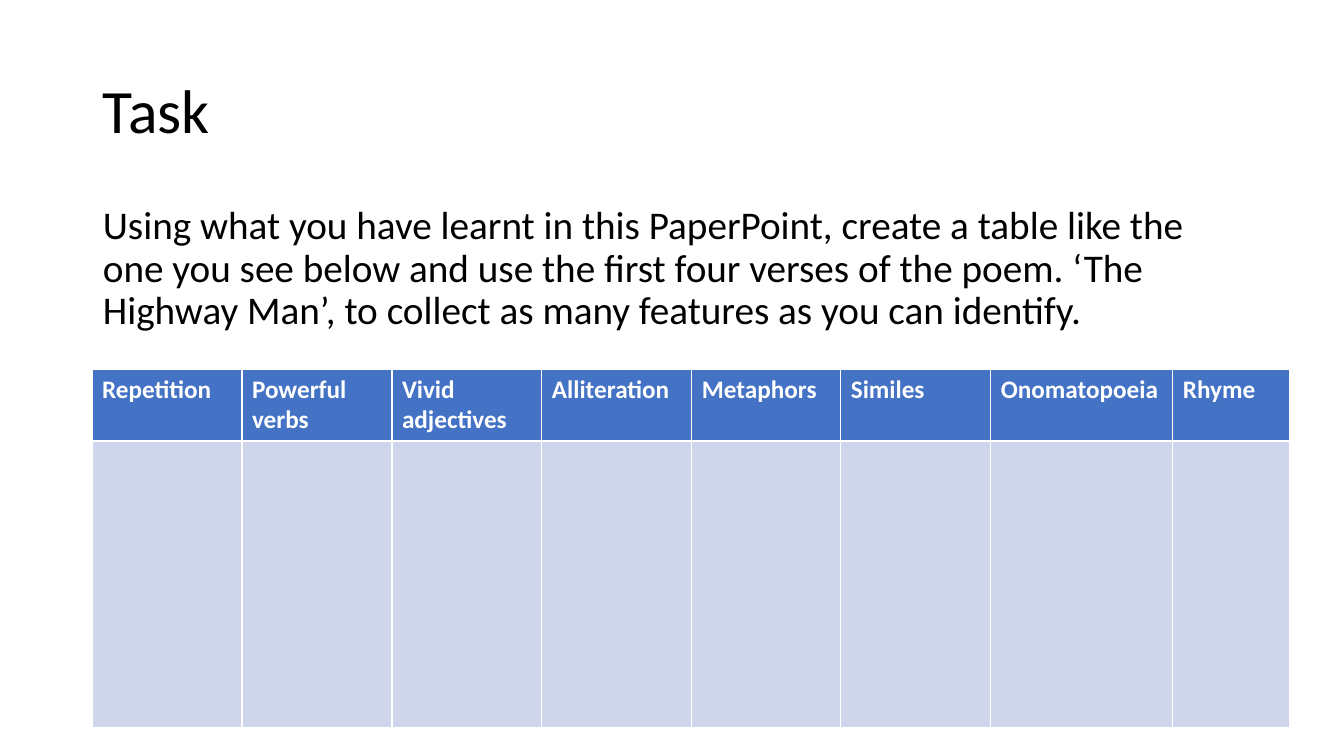
"""Build the Task slide: a title, an instruction and a table of poetic features."""
from lxml.etree import SubElement
from pptx import Presentation
from pptx.dml.color import RGBColor
from pptx.enum.text import MSO_ANCHOR
from pptx.oxml.ns import qn
from pptx.util import Pt

TITLE = "Task"
INSTRUCTION = (
    "Using what you have learnt in this PaperPoint, create a table like the one "
    "you see below and use the first four verses of the poem. ‘The Highway Man’, "
    "to collect as many features as you can identify."
)
FEATURES = [
    ("Repetition", 150),
    ("Powerful verbs", 150),
    ("Vivid adjectives", 150),
    ("Alliteration", 150),
    ("Metaphors", 149),
    ("Similes", 150),
    ("Onomatopoeia", 182),
    ("Rhyme", 117),
]
ROW_HEIGHTS = [72, 287]

SLIDE_WIDTH, SLIDE_HEIGHT = 1344, 756
TEXT_LEFT, TEXT_WIDTH = 93, 1159
TITLE_TOP, TITLE_HEIGHT = 41, 146
INSTRUCTION_TOP, INSTRUCTION_HEIGHT = 201, 480
TABLE_LEFT, TABLE_TOP = 92, 369
FONT = "Calibri"
BLACK = RGBColor(0x00, 0x00, 0x00)
WHITE = RGBColor(0xFF, 0xFF, 0xFF)
HEADER_BLUE = RGBColor(0x44, 0x72, 0xC4)
BODY_BLUE = RGBColor(0xCF, 0xD5, 0xEA)


def px(length):
    """Turn px into EMU."""
    return round(length * 914400 / 100.8)


def style(paragraph, size, color, bold=False):
    """Set the font of a whole paragraph."""
    font = paragraph.font
    font.name, font.size, font.bold = FONT, Pt(size), bold
    font.color.rgb = color


def add_text(slide, text, top, height, size, anchor, space_before=0):
    """Add a wrapped text box on the left margin."""
    box = slide.shapes.add_textbox(px(TEXT_LEFT), px(top), px(TEXT_WIDTH), px(height))
    frame = box.text_frame
    frame.word_wrap = True
    frame.vertical_anchor = anchor
    frame.text = text
    paragraph = frame.paragraphs[0]
    paragraph.line_spacing = 0.9
    paragraph.space_before = Pt(space_before)
    style(paragraph, size, BLACK)


def set_borders(cell, **widths):
    """Give a cell white borders, with a width in points for each side."""
    properties = cell._tc.get_or_add_tcPr()
    for side, width in widths.items():
        line = SubElement(properties, qn(f"a:ln{side}"), w=str(Pt(width)))
        fill = SubElement(line, qn("a:solidFill"))
        SubElement(fill, qn("a:srgbClr"), val=str(WHITE))


def add_feature_table(slide):
    """Add the header row of features above one empty row."""
    table_width = sum(width for _, width in FEATURES)
    table = slide.shapes.add_table(
        len(ROW_HEIGHTS), len(FEATURES),
        px(TABLE_LEFT), px(TABLE_TOP), px(table_width), px(sum(ROW_HEIGHTS)),
    ).table
    for row, height in zip(table.rows, ROW_HEIGHTS):
        row.height = px(height)
    for index, (feature, width) in enumerate(FEATURES):
        table.columns[index].width = px(width)
        header, body = table.cell(0, index), table.cell(1, index)
        header.text = feature
        style(header.text_frame.paragraphs[0], 18, WHITE, bold=True)
        style(body.text_frame.paragraphs[0], 18, BLACK)
        set_borders(header, L=1, R=1, T=1, B=2)
        set_borders(body, L=1, R=1, T=2, B=1)
        for cell, color in ((header, HEADER_BLUE), (body, BODY_BLUE)):
            cell.fill.solid()
            cell.fill.fore_color.rgb = color


def main():
    """Build and save the slide."""
    deck = Presentation()
    deck.slide_width, deck.slide_height = px(SLIDE_WIDTH), px(SLIDE_HEIGHT)
    slide = deck.slides.add_slide(deck.slide_layouts[6])
    add_text(slide, TITLE, TITLE_TOP, TITLE_HEIGHT, 44, MSO_ANCHOR.MIDDLE)
    add_text(slide, INSTRUCTION, INSTRUCTION_TOP, INSTRUCTION_HEIGHT, 28,
             MSO_ANCHOR.TOP, space_before=10)
    add_feature_table(slide)
    deck.save("out.pptx")


if __name__ == "__main__":
    main()
